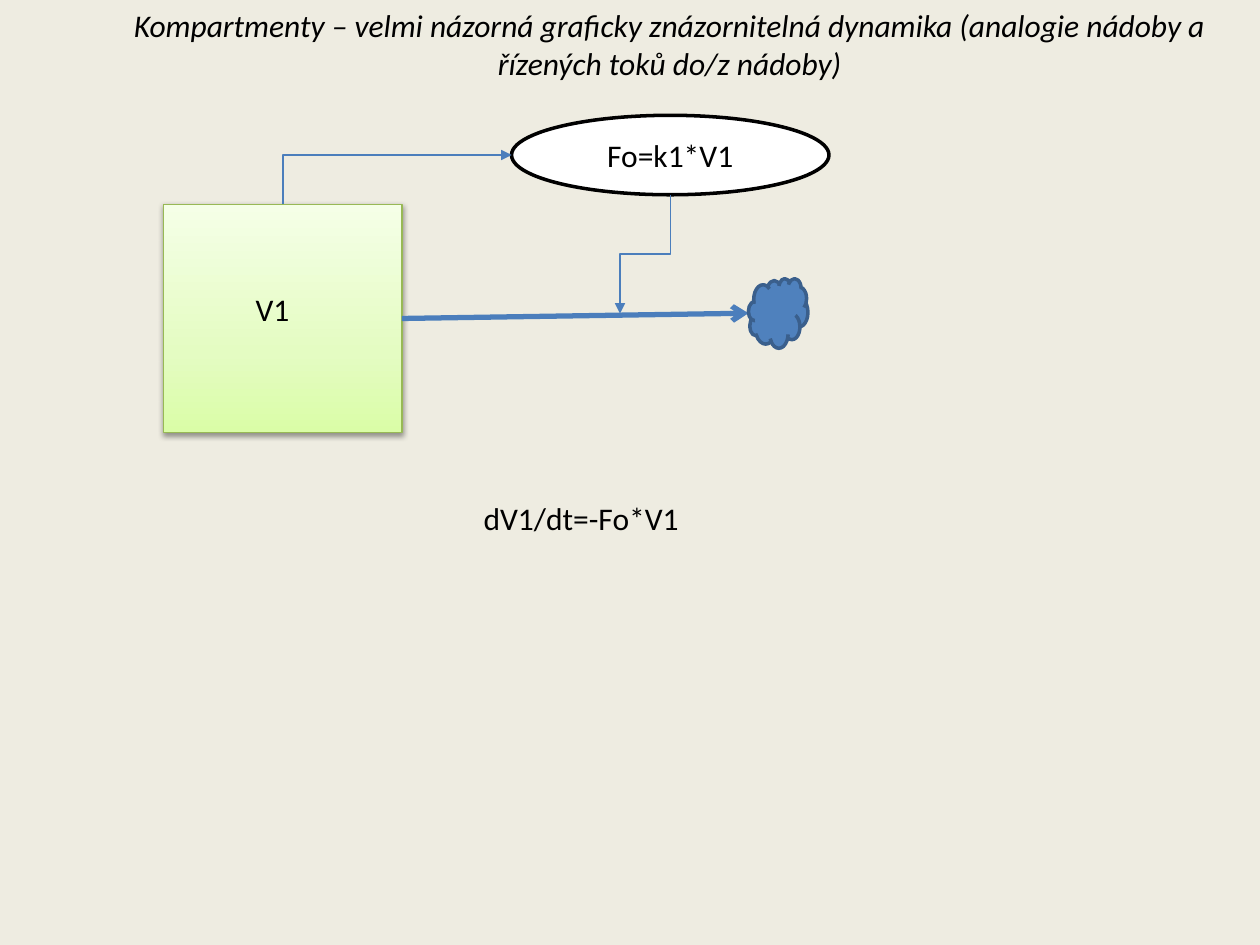
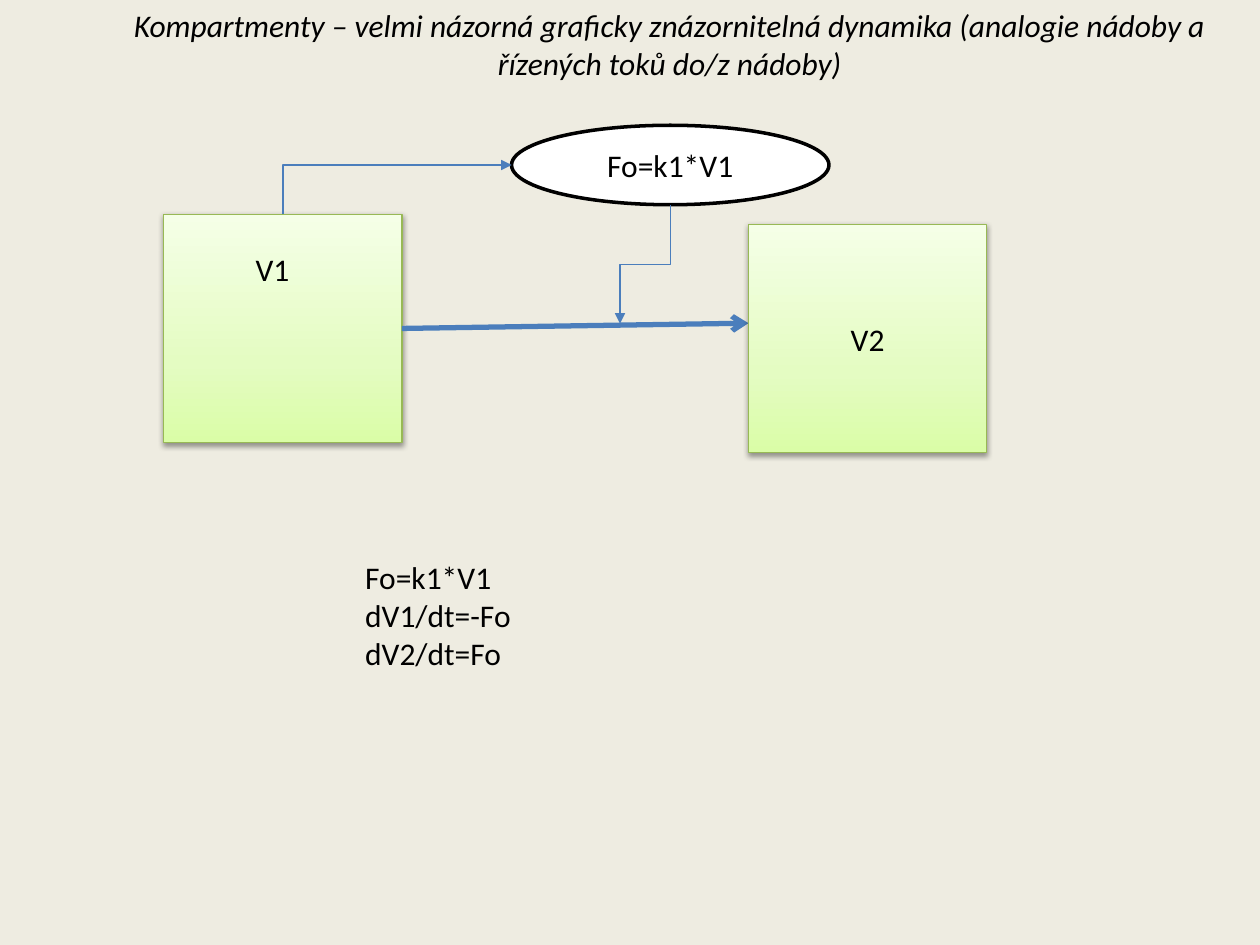
from copy import deepcopy

from pptx import Presentation
from pptx.dml.color import RGBColor
from pptx.enum.shapes import MSO_CONNECTOR, MSO_SHAPE
from pptx.enum.text import MSO_ANCHOR, MSO_AUTO_SIZE, PP_ALIGN
from pptx.oxml import parse_xml
from pptx.oxml.ns import nsdecls, qn
from pptx.util import Pt

STRAIGHT, ELBOW = MSO_CONNECTOR.STRAIGHT, MSO_CONNECTOR.ELBOW
RECT, OVAL, CLOUD = MSO_SHAPE.RECTANGLE, MSO_SHAPE.OVAL, MSO_SHAPE.CLOUD
TOP, MIDDLE = MSO_ANCHOR.TOP, MSO_ANCHOR.MIDDLE
LEFT, CENTER = PP_ALIGN.LEFT, PP_ALIGN.CENTER
RIGHT_SIDE = 3

TITLE = ("Kompartmenty – velmi názorná graficky znázornitelná dynamika "
         "(analogie nádoby a řízených toků do/z nádoby)")
RATE = "Fo=k1*V1"
DIAGRAMS = [
    {"shift": 0, "label": 162, "target": None,
     "eqs": ["dV1/dt=-Fo*V1"], "eq_box": (269.3, 281.5, 127.4, 29)},
    {"shift": 5.7, "label": 139.5, "target": "V2",
     "eqs": [RATE, "dV1/dt=-Fo", "dV2/dt=Fo"],
     "eq_box": (201.6, 315.4, 98.6, 72.7)},
]

COLORS = {"back": "EEECE1", "text": "000000", "white": "FFFFFF",
          "flow": "4B7EBC", "tank": "98B955",
          "cloud": "4F81BD", "rim": "3A5F8C"}
TANK_FADE = [(0, "DAFDA7"), (0.35, "E4FCC2"), (1, "F5FFE7")]
FONT, SIZE = "Calibri", 18

TITLE_BOX = (39.6, 0, 686.2, 51.1)
TANK = (93.6, 116.8, 136.1, 130.4)
VALVE = (292.3, 65.9, 181.4, 45.4)
SINK = (427.7, 159.1, 34, 39.8)
FLOW_END = (427.7, 179)
TAP = (354.3, 179.2)

SHADOW = (f'<a:outerShdw {nsdecls("a")} blurRad="{Pt(3.15)}" dist="{Pt(1.6)}"'
          ' dir="5400000" rotWithShape="0"><a:srgbClr val="000000">'
          '<a:alpha val="38000"/></a:srgbClr></a:outerShdw>')


def rgb(name):
    return RGBColor.from_string(COLORS[name])


def pts(*vals):
    return [Pt(round(val, 2)) for val in vals]


def down(box, dist):
    return (box[0], box[1] + dist, *box[2:])


def write(shape, lines, align=LEFT, anchor=TOP, italic=None):
    frame = shape.text_frame
    frame.text = "\n".join(lines)
    frame.vertical_anchor = anchor
    for para in frame.paragraphs:
        para.alignment = align
        font = para.font
        font.name, font.size, font.italic = FONT, Pt(SIZE), italic
        font.color.rgb = rgb("text")


def add_text(slide, lines, box):
    shape = slide.shapes.add_textbox(*pts(*box))
    write(shape, lines)
    shape.text_frame.word_wrap = False
    shape.text_frame.auto_size = MSO_AUTO_SIZE.SHAPE_TO_FIT_TEXT


def add_shape(slide, kind, box, line, width, fill=None, text=None):
    shape = slide.shapes.add_shape(kind, *pts(*box))
    shape.shadow.inherit = False
    shape.line.color.rgb = rgb(line)
    shape.line.width = Pt(width)
    if fill:
        shape.fill.solid()
        shape.fill.fore_color.rgb = rgb(fill)
    if text:
        write(shape, [text], CENTER, MIDDLE)
    return shape


def add_tank(slide, box, text=None):
    tank = add_shape(slide, RECT, box, "tank", 0.75, text=text)
    tank.fill.gradient()
    tank.fill.gradient_angle = 90
    props = tank.element.spPr
    stops = props.find(".//" + qn("a:gsLst"))
    stops.append(deepcopy(stops[0]))
    for stop, (pos, color) in zip(tank.fill.gradient_stops, TANK_FADE):
        stop.position = pos
        stop.color.rgb = RGBColor.from_string(color)
    props.find(qn("a:effectLst")).append(parse_xml(SHADOW))
    return tank


def add_arrow(slide, kind, start, end, width, head):
    arrow = slide.shapes.add_connector(kind, *pts(*start, *end))
    arrow.line.color.rgb = rgb("flow")
    arrow.line.width = Pt(width)
    arrow.line._get_or_add_ln().append(
        parse_xml(f'<a:tailEnd {nsdecls("a")} type="{head}"/>'))
    arrow.element.spPr.append(parse_xml(f'<a:effectLst {nsdecls("a")}/>'))
    return arrow


def add_bend(slide, start, end, preset):
    """Add an elbow that leaves its start vertically (a quarter-turned frame)."""
    mid_x, mid_y = (start[0] + end[0]) / 2, (start[1] + end[1]) / 2
    ends = [(mid_x + y - mid_y, mid_y - x + mid_x) for x, y in (start, end)]
    bend = add_arrow(slide, ELBOW, *ends, 0.75, "triangle")
    props = bend.element.spPr
    props.find(qn("a:xfrm")).set("rot", "5400000")
    props.find(qn("a:prstGeom")).set("prst", preset)


def add_title(slide):
    title = slide.shapes.title
    title.left, title.top, title.width, title.height = pts(*TITLE_BOX)
    write(title, [TITLE], CENTER, TOP, italic=True)
    title.text_frame.word_wrap = True


def draw(slide, plan):
    shift = plan["shift"]
    box, valve = down(TANK, shift), down(VALVE, shift)
    flow_end, tap = down(FLOW_END, shift), down(TAP, shift)
    add_title(slide)
    tank = add_tank(slide, box)
    mid = box[0] + box[2] / 2
    side = (box[0] + box[2], box[1] + box[3] / 2)
    flow = add_arrow(slide, STRAIGHT, side, flow_end, 3, "arrow")
    flow.begin_connect(tank, RIGHT_SIDE)
    add_text(slide, ["V1"], (139, plan["label"], 33.8, 29))
    add_shape(slide, OVAL, valve, "text", 2, "white", RATE)
    add_bend(slide, (mid, box[1]), (valve[0], valve[1] + valve[3] / 2),
             "bentConnector2")
    add_bend(slide, (valve[0] + valve[2] / 2, valve[1] + valve[3]), tap,
             "bentConnector3")
    if plan["target"]:
        add_tank(slide, (flow_end[0], *down(box, shift)[1:]), plan["target"])
    else:
        add_shape(slide, CLOUD, SINK, "rim", 2, "cloud")
    add_text(slide, plan["eqs"], plan["eq_box"])


def main():
    prs = Presentation()
    prs.slide_width, prs.slide_height = Pt(720), Pt(540)
    back = prs.slide_master.background.fill
    back.solid()
    back.fore_color.rgb = rgb("back")
    for plan in DIAGRAMS:
        draw(prs.slides.add_slide(prs.slide_layouts[5]), plan)
    prs.save("out.pptx")


if __name__ == "__main__":
    main()
